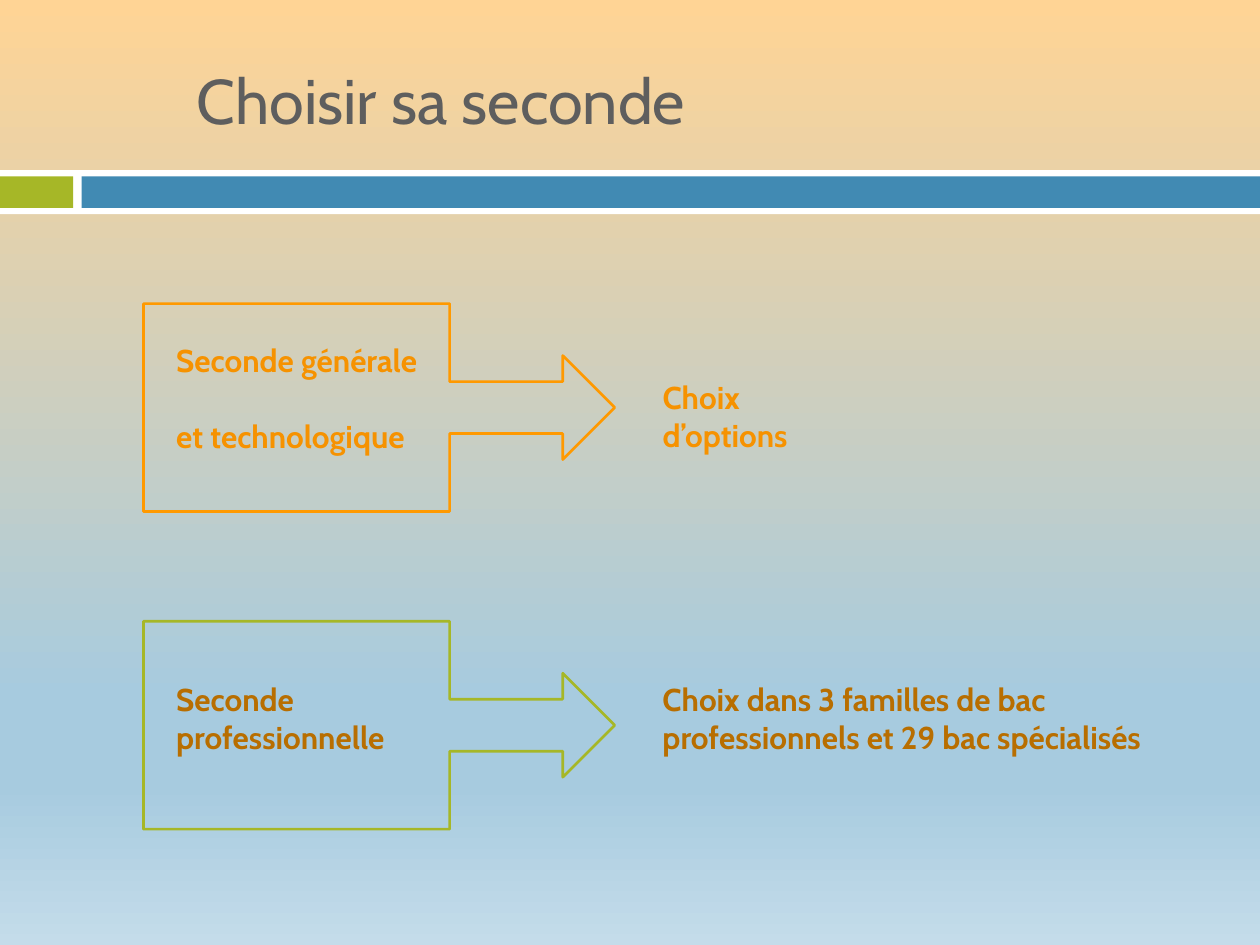
from dataclasses import dataclass

from lxml import etree
from pptx import Presentation
from pptx.dml.color import RGBColor
from pptx.enum.shapes import MSO_SHAPE
from pptx.enum.text import MSO_ANCHOR, MSO_AUTO_SIZE, PP_ALIGN
from pptx.oxml.ns import qn
from pptx.slide import Slide
from pptx.text.text import TextFrame
from pptx.util import Pt

RECTANGLE = MSO_SHAPE.RECTANGLE
CALLOUT = MSO_SHAPE.RIGHT_ARROW_CALLOUT
LEFT = PP_ALIGN.LEFT
TOP, MIDDLE = MSO_ANCHOR.TOP, MSO_ANCHOR.MIDDLE
NO_AUTOSIZE = MSO_AUTO_SIZE.NONE

WHITE = RGBColor(0xFF, 0xFF, 0xFF)
GREEN = RGBColor(0xA6, 0xB7, 0x27)
BLUE = RGBColor(0x41, 0x8A, 0xB3)
GREY = RGBColor(0x5E, 0x5E, 0x5E)
ORANGE = RGBColor(0xF6, 0x92, 0x00)
BRIGHT_ORANGE = RGBColor(0xFF, 0x99, 0x00)
BROWN = RGBColor(0xB8, 0x6E, 0x00)
SAND = RGBColor(0xFF, 0xD4, 0x95)
SKY = RGBColor(0xA7, 0xCB, 0xDF)
PALE_SKY = RGBColor(0xC4, 0xDC, 0xEA)

SLIDE_WIDTH, SLIDE_HEIGHT = 720, 540
BACKGROUND_STOPS = ((0, SAND), (74, SKY), (83, SKY), (100, PALE_SKY))
FONT = "Cabin"
TITLE_FORMAT = {"name": FONT, "size": Pt(36), "bold": False}
BODY_FORMAT = {"name": FONT, "size": Pt(18), "bold": True}
CALLOUT_LEFT, CALLOUT_WIDTH, CALLOUT_HEIGHT = 82, 269.3, 118.8
LABEL_LEFT, CHOICE_LEFT = 93.6, 371.5


@dataclass(frozen=True)
class Bar:
    left: float
    top: float
    width: float
    height: float
    color: RGBColor


@dataclass(frozen=True)
class Label:
    left: float
    top: float
    width: float
    height: float
    paragraphs: tuple[str, ...]
    space_before: float = 0


@dataclass(frozen=True)
class Pathway:
    top: float
    outline: RGBColor
    text_color: RGBColor
    labels: tuple[Label, ...]


BARS = (
    Bar(0, 97.2, SLIDE_WIDTH, 25.2, WHITE),
    Bar(0, 100.8, 41.8, 18, GREEN),
    Bar(46.6, 100.8, SLIDE_WIDTH - 46.6, 18, BLUE),
)

PATHWAYS = (
    Pathway(173.5, BRIGHT_ORANGE, ORANGE, (
        Label(LABEL_LEFT, 191.5, 181.4, 72.7,
              ("Seconde générale", "et technologique"), space_before=21.4),
        Label(CHOICE_LEFT, 212.4, 133.2, 50.8, ("Choix\vd’options",)),
    )),
    Pathway(355, GREEN, BROWN, (
        Label(LABEL_LEFT, 385.2, 215.3, 50.8, ("Seconde", "professionnelle")),
        Label(CHOICE_LEFT, 385.2, 314.6, 50.8,
              ("Choix dans 3 familles de bac professionnels et 29 bac spécialisés",)),
    )),
)


def set_background(slide: Slide) -> None:
    """Fill the background with a vertical gradient of several stops."""
    fill = slide.background.fill
    fill.gradient()
    fill.gradient_angle = 270
    stop_list = next(slide.background._cSld.iter(qn("a:gsLst")))
    for stop in list(stop_list):
        stop_list.remove(stop)
    for percent, color in BACKGROUND_STOPS:
        stop = etree.SubElement(stop_list, qn("a:gs"), pos=str(percent * 1000))
        etree.SubElement(stop, qn("a:srgbClr"), val=str(color))


def write_text(frame: TextFrame, paragraphs: tuple[str, ...], font_format: dict,
               color: RGBColor, anchor: MSO_ANCHOR, space_before: float = 0) -> None:
    frame.word_wrap = True
    frame.auto_size = NO_AUTOSIZE
    frame.vertical_anchor = anchor
    for index, text in enumerate(paragraphs):
        paragraph = frame.add_paragraph() if index else frame.paragraphs[0]
        paragraph.text = text
        paragraph.alignment = LEFT
        if index:
            paragraph.space_before = Pt(space_before)
        for name, value in font_format.items():
            setattr(paragraph.font, name, value)
        paragraph.font.color.rgb = color


def add_title(slide: Slide, text: str) -> None:
    title = slide.shapes.title
    place = {"left": 105.1, "top": 18, "width": 614.9, "height": 77.8}
    for name, value in place.items():
        setattr(title, name, Pt(value))
    write_text(title.text_frame, (text,), TITLE_FORMAT, GREY, MIDDLE)


def add_bar(slide: Slide, bar: Bar) -> None:
    shape = slide.shapes.add_shape(
        RECTANGLE, Pt(bar.left), Pt(bar.top), Pt(bar.width), Pt(bar.height))
    shape.shadow.inherit = False
    shape.fill.solid()
    shape.fill.fore_color.rgb = bar.color
    shape.line.fill.background()


def add_pathway(slide: Slide, pathway: Pathway) -> None:
    callout = slide.shapes.add_shape(
        CALLOUT, Pt(CALLOUT_LEFT), Pt(pathway.top),
        Pt(CALLOUT_WIDTH), Pt(CALLOUT_HEIGHT))
    callout.shadow.inherit = False
    callout.fill.background()
    callout.line.color.rgb = pathway.outline
    callout.line.width = Pt(1.5)
    for label in pathway.labels:
        box = slide.shapes.add_textbox(
            Pt(label.left), Pt(label.top), Pt(label.width), Pt(label.height))
        write_text(box.text_frame, label.paragraphs, BODY_FORMAT,
                   pathway.text_color, TOP, label.space_before)


def main() -> None:
    presentation = Presentation()
    presentation.slide_width = Pt(SLIDE_WIDTH)
    presentation.slide_height = Pt(SLIDE_HEIGHT)
    slide = presentation.slides.add_slide(presentation.slide_layouts[5])
    set_background(slide)
    for bar in BARS:
        add_bar(slide, bar)
    add_title(slide, "Choisir sa seconde")
    for pathway in PATHWAYS:
        add_pathway(slide, pathway)
    presentation.save("out.pptx")


if __name__ == "__main__":
    main()
